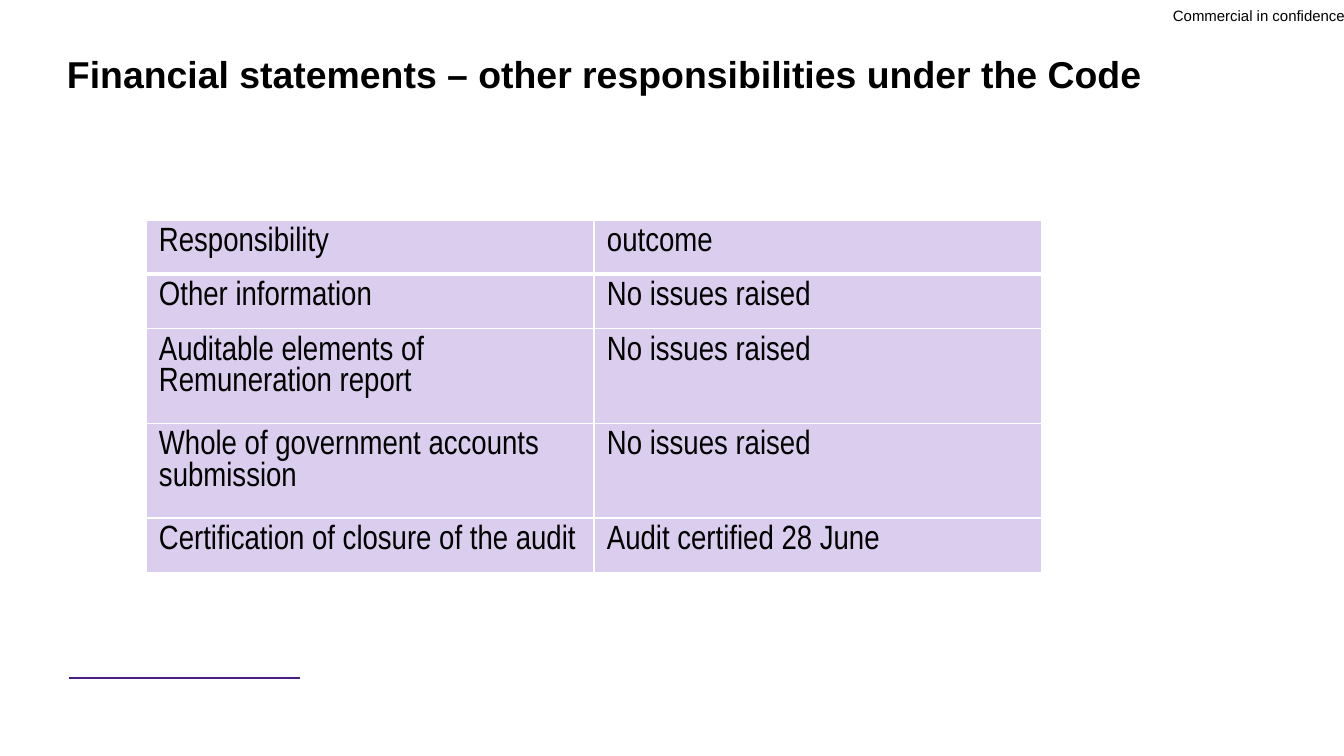
from dataclasses import dataclass

from lxml import etree
from pptx import Presentation, util as u
from pptx.dml.color import RGBColor
from pptx.enum import shapes, text
from pptx.oxml import ns

EMU_PER_PX = 914400 / 100.8


@dataclass(frozen=True)
class Theme:
    ink: str = "000000"
    rule: str = "471E82"
    cell: str = "DACDED"
    border: str = "FFFFFF"
    font: str = "Arial"
    table_font: str = "Arial Narrow"
    marking_size: float = 10.7
    title_size: float = 26.7
    table_size: float = 24
    rule_width: float = 1.5
    border_width: float = 1
    header_border_width: float = 3


@dataclass(frozen=True)
class Label:
    wording: str
    box: tuple[int, int, int, int]
    size: float
    frame_format: dict
    paragraph_format: dict
    bold: bool = False


@dataclass(frozen=True)
class Responsibility:
    name: str
    outcome: str
    height: int


THEME = Theme()
MARGINS = ("margin_left", "margin_top", "margin_right", "margin_bottom")

LABELS = [
    Label("Commercial in confidence", (1134, 7, 211, 18), THEME.marking_size,
          {"word_wrap": False, "vertical_anchor": text.MSO_ANCHOR.MIDDLE,
           "auto_size": text.MSO_AUTO_SIZE.SHAPE_TO_FIT_TEXT},
          {"alignment": text.PP_ALIGN.RIGHT}),
    Label("Financial statements – other responsibilities under the Code",
          (67, 58, 1210, 103), THEME.title_size,
          {"word_wrap": True, "vertical_anchor": text.MSO_ANCHOR.TOP},
          {"line_spacing": 0.85}, bold=True),
]

RESPONSIBILITIES = [
    Responsibility("Responsibility", "outcome", 54),
    Responsibility("Other information", "No issues raised", 54),
    Responsibility("Auditable elements of Remuneration report", "No issues raised", 94),
    Responsibility("Whole of government accounts submission", "No issues raised", 94),
    Responsibility("Certification of closure of the audit", "Audit certified 28 June", 54),
]
TABLE_LEFT, TABLE_TOP, COLUMN_WIDTH = 146, 220, 448
CELL_INSETS = (13, 7, 13, 7)


def px(length: int) -> u.Emu:
    return u.Emu(round(length * EMU_PER_PX))


def apply(target, values: dict) -> None:
    for name, value in values.items():
        setattr(target, name, value)


def style_font(font, name: str, size: float, bold: bool = False) -> None:
    apply(font, {"name": name, "size": u.Pt(size), "bold": bold})
    font.color.rgb = RGBColor.from_string(THEME.ink)


def draw_label(slide, label: Label) -> None:
    frame = slide.shapes.add_textbox(*map(px, label.box)).text_frame
    apply(frame, dict.fromkeys(MARGINS, 0) | label.frame_format)
    paragraph = frame.paragraphs[0]
    run = paragraph.add_run()
    run.text = label.wording
    apply(paragraph, label.paragraph_format)
    style_font(run.font, THEME.font, label.size, label.bold)


def draw_footer_rule(slide) -> None:
    rule = slide.shapes.add_connector(
        shapes.MSO_CONNECTOR.STRAIGHT, px(69), px(678), px(300), px(678))
    rule.line.color.rgb = RGBColor.from_string(THEME.rule)
    rule.line.width = u.Pt(THEME.rule_width)
    etree.SubElement(rule._element.spPr, ns.qn("a:effectLst"))


def add_border(cell, side: str, width: float) -> None:
    properties = cell._tc.get_or_add_tcPr()
    border = etree.SubElement(properties, ns.qn(f"a:ln{side}"), w=str(u.Pt(width)))
    fill = etree.SubElement(border, ns.qn("a:solidFill"))
    etree.SubElement(fill, ns.qn("a:srgbClr"), val=THEME.border)


def draw_cell(cell, wording: str, row_index: int) -> None:
    apply(cell, dict(zip(MARGINS, map(px, CELL_INSETS))))
    # The line between header and body is heavier
    heavy_sides = {0: "B", 1: "T"}
    for side in "LRTB":
        heavy = heavy_sides.get(row_index) == side
        add_border(cell, side, THEME.header_border_width if heavy else THEME.border_width)
    cell.fill.solid()
    cell.fill.fore_color.rgb = RGBColor.from_string(THEME.cell)
    run = cell.text_frame.paragraphs[0].add_run()
    run.text = wording
    style_font(run.font, THEME.table_font, THEME.table_size)


def draw_outcomes(slide) -> None:
    height = sum(item.height for item in RESPONSIBILITIES)
    outcomes = slide.shapes.add_table(
        len(RESPONSIBILITIES), 2, px(TABLE_LEFT), px(TABLE_TOP),
        px(2 * COLUMN_WIDTH), px(height)).table
    outcomes.horz_banding = False
    for column in outcomes.columns:
        column.width = px(COLUMN_WIDTH)
    for row_index, item in enumerate(RESPONSIBILITIES):
        outcomes.rows[row_index].height = px(item.height)
        for column_index, wording in enumerate((item.name, item.outcome)):
            draw_cell(outcomes.cell(row_index, column_index), wording, row_index)


def main() -> None:
    deck = Presentation()
    apply(deck, {"slide_width": px(1344), "slide_height": px(756)})
    slide = deck.slides.add_slide(deck.slide_layouts[6])

    # Confidentiality marking and title
    for label in LABELS:
        draw_label(slide, label)

    # Responsibilities and their outcomes
    draw_outcomes(slide)

    # Footer
    draw_footer_rule(slide)

    deck.save("out.pptx")


if __name__ == "__main__":
    main()
